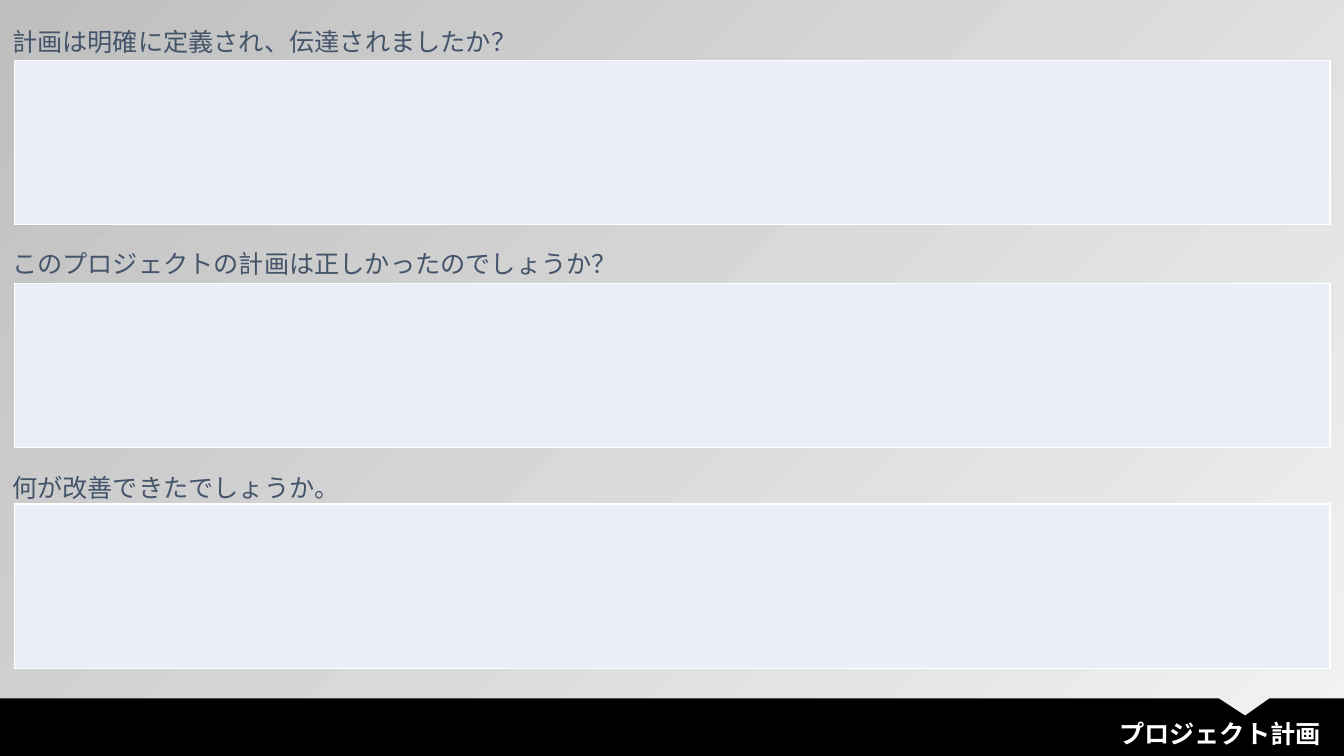
from lxml import etree
from pptx import Presentation, util as u
from pptx.dml.color import RGBColor
from pptx.enum import text
from pptx.oxml import ns

FONT = "League Spartan"
TITLE = "プロジェクト計画"
# question, label top, label height, answer top, line spacing
QUESTIONS = [
    ("計画は明確に定義され、伝達されましたか？", 0.2, 0.41, 0.6, u.Pt(21.5)),
    ("このプロジェクトの計画は正しかったのでしょうか？", 2.41, 0.41, 2.81, u.Pt(21.5)),
    ("何が改善できたでしょうか。", 4.57, 0.45, 5, 1.2),
]
BAND = [(0, 6.93), (12.09, 6.93), (12.35, 7.1), (12.59, 6.93),
        (13.33, 6.93), (13.33, 7.5), (0, 7.5)]
BACKGROUND = ["F2F2F2", "BFBFBF"]


def rgb(value):
    return RGBColor.from_string(value)


def inches(*values):
    return [u.Inches(value) for value in values]


def write(shape, words, color, align, bold=False):
    frame = shape.text_frame
    frame.word_wrap = True
    frame.auto_size = text.MSO_AUTO_SIZE.SHAPE_TO_FIT_TEXT
    frame.vertical_anchor = text.MSO_ANCHOR.TOP
    paragraph = frame.paragraphs[0]
    paragraph.text = words
    paragraph.alignment = align
    font = paragraph.font
    font.name, font.size, font.bold = FONT, u.Pt(18), bold
    font.color.rgb = rgb(color)
    return frame


def add_border(cell, color, width):
    properties = cell._tc.get_or_add_tcPr()
    for index, side in enumerate(("lnL", "lnR", "lnT", "lnB")):
        line = etree.Element(ns.qn(f"a:{side}"), w=str(u.Pt(width)))
        fill = etree.SubElement(line, ns.qn("a:solidFill"))
        etree.SubElement(fill, ns.qn("a:srgbClr"), val=color)
        properties.insert(index, line)


def add_answer_box(slide, top):
    table = slide.shapes.add_table(1, 1, *inches(0.14, top, 13.05, 1.63)).table
    cell = table.cell(0, 0)
    cell.fill.solid()
    cell.fill.fore_color.rgb = rgb("EAEFF7")
    add_border(cell, "FFFFFF", 1)


def add_question(slide, words, top, height, spacing):
    box = slide.shapes.add_textbox(*inches(0, top, 7.63, height))
    frame = write(box, words, "44546A", text.PP_ALIGN.LEFT)
    frame.margin_left = frame.margin_right = u.Inches(0.12)
    frame.margin_top = frame.margin_bottom = u.Inches(0.06)
    frame.paragraphs[0].line_spacing = spacing
    frame.paragraphs[0].space_before = u.Pt(3.6)


def add_band(slide):
    start, *corners = [inches(*point) for point in BAND]
    builder = slide.shapes.build_freeform(*start)
    builder.add_line_segments(corners, close=True)
    band = builder.convert_to_shape()
    band.shadow.inherit = False
    band.fill.solid()
    band.fill.fore_color.rgb = rgb("000000")
    band.line.fill.background()
    return band


def main():
    presentation = Presentation()
    presentation.slide_width, presentation.slide_height = inches(13.33, 7.5)
    slide = presentation.slides.add_slide(presentation.slide_layouts[5])

    fill = slide.background.fill
    fill.gradient()
    fill.gradient_angle = 135
    for stop, color in zip(fill.gradient_stops, BACKGROUND):
        stop.color.rgb = rgb(color)

    band = add_band(slide)
    title = slide.shapes.title
    title.left, title.top, title.width, title.height = inches(4.14, 7.08, 9.06, 0.4)
    write(title, TITLE, "FFFFFF", text.PP_ALIGN.RIGHT, bold=True)
    band.element.addnext(title.element)  # the title lies on top of the band

    for words, top, height, answer_top, spacing in QUESTIONS:
        add_answer_box(slide, answer_top)
        add_question(slide, words, top, height, spacing)

    presentation.save("out.pptx")


if __name__ == "__main__":
    main()
